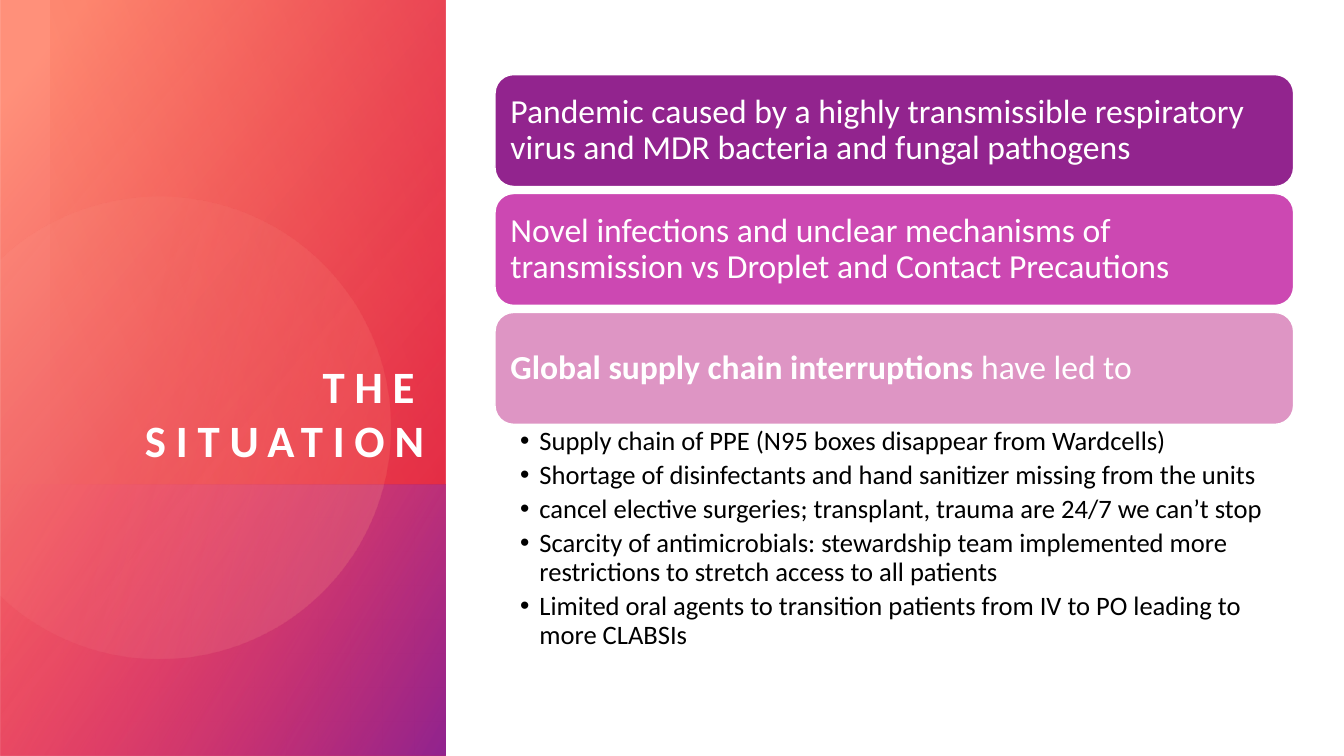
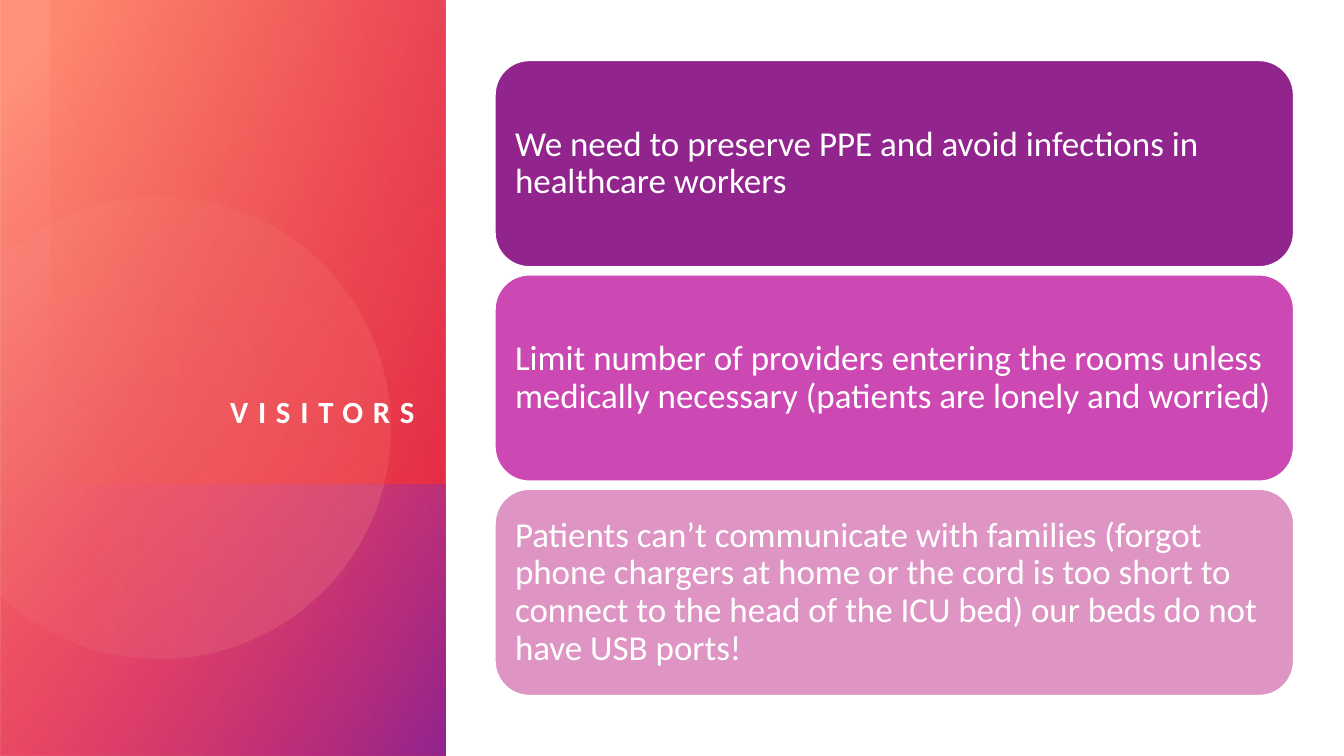
"""Builds two slides with a gradient title panel and a stack of message cards."""
import math
from collections import namedtuple

from lxml import etree
from pptx import Presentation, util as u
from pptx.dml import color
from pptx.enum import shapes, text
from pptx.oxml import ns

PX = 9144
Box = namedtuple("Box", "left top width height")
SLIDE = Box(0, 0, 1333, 750)
PANEL = Box(0, 0, 442, 750)
FONT = "Calibri"

WHITE = color.RGBColor(0xFF, 0xFF, 0xFF)
BLACK = color.RGBColor(0x00, 0x00, 0x00)
PURPLE = color.RGBColor(0x92, 0x24, 0x8E)
MAGENTA = color.RGBColor(0xCC, 0x48, 0xB2)
PINK = color.RGBColor(0xDE, 0x95, 0xC4)
CORAL = color.RGBColor(0xFF, 0x90, 0x7A)
BLUSH = color.RGBColor(0xFF, 0xBC, 0xAF)
ROSE = color.RGBColor(0xFF, 0x50, 0x76)
RED = color.RGBColor(0xDA, 0x00, 0x2F)
ORANGE = color.RGBColor(0xFE, 0x4A, 0x00)
CARD_COLOURS = (PURPLE, MAGENTA, PINK)

SITUATION_CARDS = (
    (("Pandemic caused by a highly transmissible respiratory virus and MDR "
      "bacteria and fungal pathogens", False),),
    (("Novel infections and unclear mechanisms of transmission vs Droplet and "
      "Contact Precautions", False),),
    (("Global supply chain interruptions", True), (" have led to", False)),
)
SITUATION_EFFECTS = (
    "Supply chain of PPE (N95 boxes disappear from Wardcells)",
    "Shortage of disinfectants and hand sanitizer missing from the units",
    "cancel elective surgeries; transplant, trauma are 24/7 we can’t stop",
    "Scarcity of antimicrobials: stewardship team implemented more "
    "restrictions to stretch access to all patients",
    "Limited oral agents to transition patients from IV to PO leading to more CLABSIs",
)
VISITOR_CARDS = (
    (("We need to preserve PPE and avoid infections in healthcare workers", False),),
    (("Limit number of providers entering the rooms unless medically necessary "
      "(patients are lonely and worried)", False),),
    (("Patients can’t communicate with families (forgot phone chargers at home "
      "or the cord is too short to connect to the head of the ICU bed) our beds "
      "do not have USB ports!", False),),
)


def emu(box):
    """Return the box as EMU lengths."""
    return [round(length * PX) for length in box]


def apply(target, values):
    """Set each named attribute of the target."""
    for name, value in values.items():
        setattr(target, name, value)


def set_frame(frame, anchor, margins):
    """Set wrapping, anchor and margins (left, top, right, bottom)."""
    left, top, right, bottom = (u.Emu(length) for length in emu(margins))
    apply(frame, dict(word_wrap=True, vertical_anchor=anchor, margin_left=left,
                      margin_top=top, margin_right=right, margin_bottom=bottom))


def add_run(paragraph, wording, size, colour, bold=False):
    """Add one formatted run to the paragraph."""
    run = paragraph.add_run()
    run.text = wording
    apply(run.font, dict(name=FONT, size=u.Pt(size), bold=bold))
    run.font.color.rgb = colour
    return run


def paint_gradient(shape, stops, angle):
    """Fill with two stops of (position, colour, opacity) at a clockwise angle."""
    shape.shadow.inherit = False
    shape.line.fill.background()
    shape.fill.gradient()
    shape.fill.gradient_angle = 360 - angle
    for stop, (position, colour, _) in zip(shape.fill.gradient_stops, stops):
        stop.position = position / 100
        stop.color.rgb = colour
    tints = shape.element.spPr.iter(ns.qn("a:srgbClr"))
    for tint, (_, _, opacity) in zip(tints, stops):
        etree.SubElement(tint, ns.qn("a:alpha")).set("val", str(opacity * 1000))


def add_turned_band(slide, box, turn, stops, angle):
    """Add a mirrored, quarter-turned rectangle that covers the box."""
    left = box.left + (box.width - box.height) / 2
    top = box.top + (box.height - box.width) / 2
    band = slide.shapes.add_shape(shapes.MSO_SHAPE.RECTANGLE,
                                  *emu((left, top, box.height, box.width)))
    band.rotation = turn
    band.element.spPr.find(ns.qn("a:xfrm")).set("flipH", "1")
    paint_gradient(band, stops, angle)


def add_cut_disc(slide, box):
    """Add a translucent disc cut off at the left edge of the box."""
    centre_x, centre_y, radius = 158, 424, 229
    reach = math.acos(-centre_x / radius)
    points = [emu((box.left + centre_x + radius * math.cos(angle),
                   box.top + centre_y + radius * math.sin(angle)))
              for angle in (-reach, -math.pi / 2, 0, math.pi / 2, reach)]
    outline = slide.shapes.build_freeform(*points[0])
    outline.add_line_segments(points[1:], close=True)
    disc = outline.convert_to_shape()
    chords = list(disc.element.spPr.iter(ns.qn("a:lnTo")))
    arc = etree.Element(ns.qn("a:arcTo"))
    turn = round(math.degrees(reach) * 60000)
    for name, value in dict(wR=radius * PX, hR=radius * PX,
                            stAng=360 * 60000 - turn, swAng=2 * turn).items():
        arc.set(name, str(value))
    chords[0].addprevious(arc)
    for chord in chords:
        chord.getparent().remove(chord)
    paint_gradient(disc, ((36, BLUSH, 6), (100, CORAL, 26)), 14)


def add_title_panel(slide, box, title, size, title_corner):
    """Add the gradient panel and a title ending at the given right and bottom."""
    split, strip = 481, 50
    add_turned_band(slide, box, 270, ((8, CORAL, 100), (100, RED, 89)), 50)
    lower = Box(box.left, box.top + split, box.width, box.height - split)
    add_turned_band(slide, lower, 270, ((0, ROSE, 0), (99, PURPLE, 100)), 60)
    add_cut_disc(slide, box)
    upper = Box(box.left + strip, box.top, box.width - strip, split)
    add_turned_band(slide, upper, 90, ((0, RED, 29), (100, ORANGE, 0)), 110)

    right, bottom = title_corner
    area = Box(box.left + 50, box.top + 95, 371, 368)
    frame = slide.shapes.add_textbox(*emu(area)).text_frame
    set_frame(frame, text.MSO_ANCHOR.BOTTOM, (0, 0, 421 - right, 463 - bottom))
    heading = frame.paragraphs[0]
    heading.alignment = text.PP_ALIGN.RIGHT
    run = add_run(heading, title, size, WHITE, bold=True)
    run.font._element.set("spc", "700")


def add_cards(slide, box, cards, gap, size):
    """Stack equal rounded cards in the box."""
    height = (box.height - gap * (len(cards) - 1)) / len(cards)
    for row, (runs, colour) in enumerate(zip(cards, CARD_COLOURS)):
        top = box.top + row * (height + gap)
        card = slide.shapes.add_shape(shapes.MSO_SHAPE.ROUNDED_RECTANGLE,
                                      *emu((box.left, top, box.width, height)))
        card.shadow.inherit = False
        card.fill.solid()
        card.fill.fore_color.rgb = colour
        card.line.color.rgb = WHITE
        card.line.width = u.Pt(1)
        set_frame(card.text_frame, text.MSO_ANCHOR.MIDDLE, (10, 10, 10, 10))
        message = card.text_frame.paragraphs[0]
        apply(message, dict(alignment=text.PP_ALIGN.LEFT, line_spacing=0.9))
        for wording, bold in runs:
            add_run(message, wording, size, WHITE, bold)


def add_bullets(slide, box, items, size):
    """Add a bulleted list in the box."""
    frame = slide.shapes.add_textbox(*emu(box)).text_frame
    set_frame(frame, text.MSO_ANCHOR.TOP, (25, 3, 19, 3))
    indent = 19 * PX
    for row, wording in enumerate(items):
        item = frame.add_paragraph() if row else frame.paragraphs[0]
        apply(item, dict(line_spacing=0.9, space_after=u.Pt(size * 0.2)))
        props = item._p.get_or_add_pPr()
        props.set("marL", str(indent))
        props.set("indent", str(-indent))
        etree.SubElement(props, ns.qn("a:buFont")).set("typeface", "Arial")
        etree.SubElement(props, ns.qn("a:buChar")).set("char", "•")
        add_run(item, wording, size, BLACK)


def add_blank_slide(deck):
    """Add a white slide on the blank layout."""
    slide = deck.slides.add_slide(deck.slide_layouts[6])
    slide.background.fill.solid()
    slide.background.fill.fore_color.rgb = WHITE
    return slide


def build_situation(deck):
    """Build the slide on the situation."""
    slide = add_blank_slide(deck)
    add_title_panel(slide, PANEL, "THE SITUATION", 32, (421, 463))
    add_cards(slide, Box(491, 74, 792, 347), SITUATION_CARDS, 7, 24)
    add_bullets(slide, Box(491, 421, 792, 255), SITUATION_EFFECTS, 19)


def build_visitors(deck):
    """Build the slide on visitors."""
    slide = add_blank_slide(deck)
    add_title_panel(slide, PANEL, "VISITORS", 22, (411, 426))
    add_cards(slide, Box(491, 60, 792, 630), VISITOR_CARDS, 8, 25)


def main():
    """Build and save the deck."""
    deck = Presentation()
    deck.slide_width, deck.slide_height = emu(SLIDE[2:])
    build_situation(deck)
    build_visitors(deck)
    deck.save("out.pptx")


if __name__ == "__main__":
    main()
